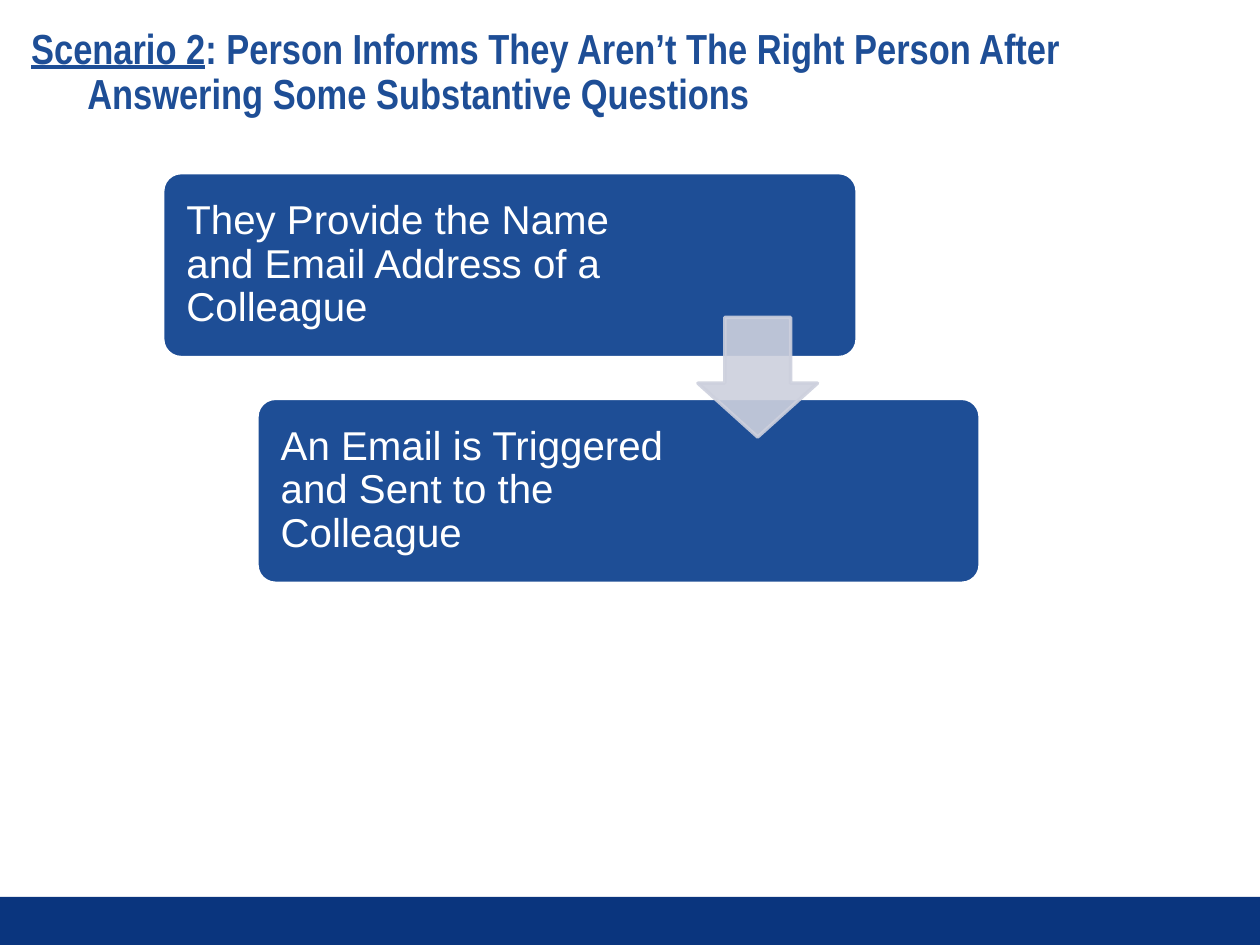
from dataclasses import dataclass

from lxml import etree
from pptx import Presentation
from pptx.dml.color import RGBColor
from pptx.enum.shapes import MSO_SHAPE
from pptx.enum.text import MSO_ANCHOR, PP_ALIGN
from pptx.oxml.ns import qn
from pptx.util import Cm, Pt

RECT = MSO_SHAPE.RECTANGLE
ROUND = MSO_SHAPE.ROUNDED_RECTANGLE
DOWN = MSO_SHAPE.DOWN_ARROW
MIDDLE = MSO_ANCHOR.MIDDLE
LEFT = PP_ALIGN.LEFT


@dataclass(frozen=True)
class Theme:
    blue: str = "1E4E96"
    navy: str = "0A357E"
    gray: str = "CDD0DD"
    white: str = "FFFFFF"
    head_font: str = "Arial Narrow"
    body_font: str = "Arial"
    head_size: int = 24
    body_size: int = 23
    edge: int = 2


@dataclass(frozen=True)
class Step:
    text: str
    left: float
    top: float
    width: float
    right: float  # inset that keeps the text clear of the arrow


THEME = Theme()
STEP_HIGH = 3.73
STEPS = (
    Step("They Provide the Name and Email Address of a Colleague",
         3.28, 3.48, 14.0, 4.45),
    Step("An Email is Triggered and Sent to the Colleague",
         5.18, 8.03, 14.58, 5.79),
)


def add_block(slide, kind, left: float, top: float, width: float,
              high: float, fill: str, edge: str | None = None):
    block = slide.shapes.add_shape(kind, Cm(left), Cm(top), Cm(width), Cm(high))
    block.shadow.inherit = False
    block.fill.solid()
    block.fill.fore_color.rgb = RGBColor.from_string(fill)
    if edge:
        block.line.color.rgb = RGBColor.from_string(edge)
        block.line.width = Pt(THEME.edge)
    else:
        block.line.fill.background()
    return block


def write(shape, parts, *, font: str, size: int, color: str,
          insets: tuple[float, float], bold: bool = False, hang: float = 0):
    """Fill a shape with (text, underline) parts; insets are left and right."""
    frame = shape.text_frame
    frame.word_wrap = True
    frame.vertical_anchor = MIDDLE
    frame.margin_left, frame.margin_right = map(Cm, insets)
    frame.margin_top = frame.margin_bottom = Cm(0.25)
    para = frame.paragraphs[0]
    para.alignment = LEFT
    para.line_spacing = 0.9
    if hang:
        props = para._p.get_or_add_pPr()
        props.set("marL", str(Cm(hang)))
        props.set("indent", str(-Cm(hang)))
    for text, under in parts:
        for row, line in enumerate(text.split("\n")):
            if row:
                para.add_line_break()
            run = para.add_run()
            run.text = line
            run.font.name = font
            run.font.size = Pt(size)
            run.font.bold = bold
            run.font.underline = under
            run.font.color.rgb = RGBColor.from_string(color)


def fade(shape, percent: int):
    """Set the opacity of a shape's fill and line."""
    for color in shape._element.spPr.iter(qn("a:srgbClr")):
        etree.SubElement(color, qn("a:alpha"), val=str(percent * 1000))


def add_title(slide):
    title = slide.shapes.add_textbox(Cm(0.38), Cm(0.43), Cm(24.56), Cm(2.11))
    parts = (
        ("Scenario 2", True),
        (": Person Informs They Aren’t The Right Person After\n"
         "Answering Some Substantive Questions", False),
    )
    write(title, parts, font=THEME.head_font, size=THEME.head_size,
          color=THEME.blue, insets=(0.25, 0.5), bold=True, hang=1.13)


def add_step(slide, step: Step):
    block = add_block(slide, ROUND, step.left, step.top, step.width,
                      STEP_HIGH, THEME.blue, THEME.white)
    block.adjustments[0] = 0.1
    write(block, [(step.text, False)], font=THEME.body_font,
          size=THEME.body_size, color=THEME.white, insets=(0.37, step.right))


def add_arrow(slide):
    arrow = add_block(slide, DOWN, 14.07, 6.4, 2.41, 2.41,
                      THEME.gray, THEME.gray)
    arrow.adjustments[0] = 0.55
    arrow.adjustments[1] = 0.45
    fade(arrow, 90)


def main():
    deck = Presentation()
    deck.slide_width, deck.slide_height = Cm(25.4), Cm(19.05)
    slide = deck.slides.add_slide(deck.slide_layouts[6])
    add_block(slide, RECT, 0, 18.08, 25.4, 0.97, THEME.navy)
    add_title(slide)
    for step in STEPS:
        add_step(slide, step)
    add_arrow(slide)
    deck.save("out.pptx")


if __name__ == "__main__":
    main()
